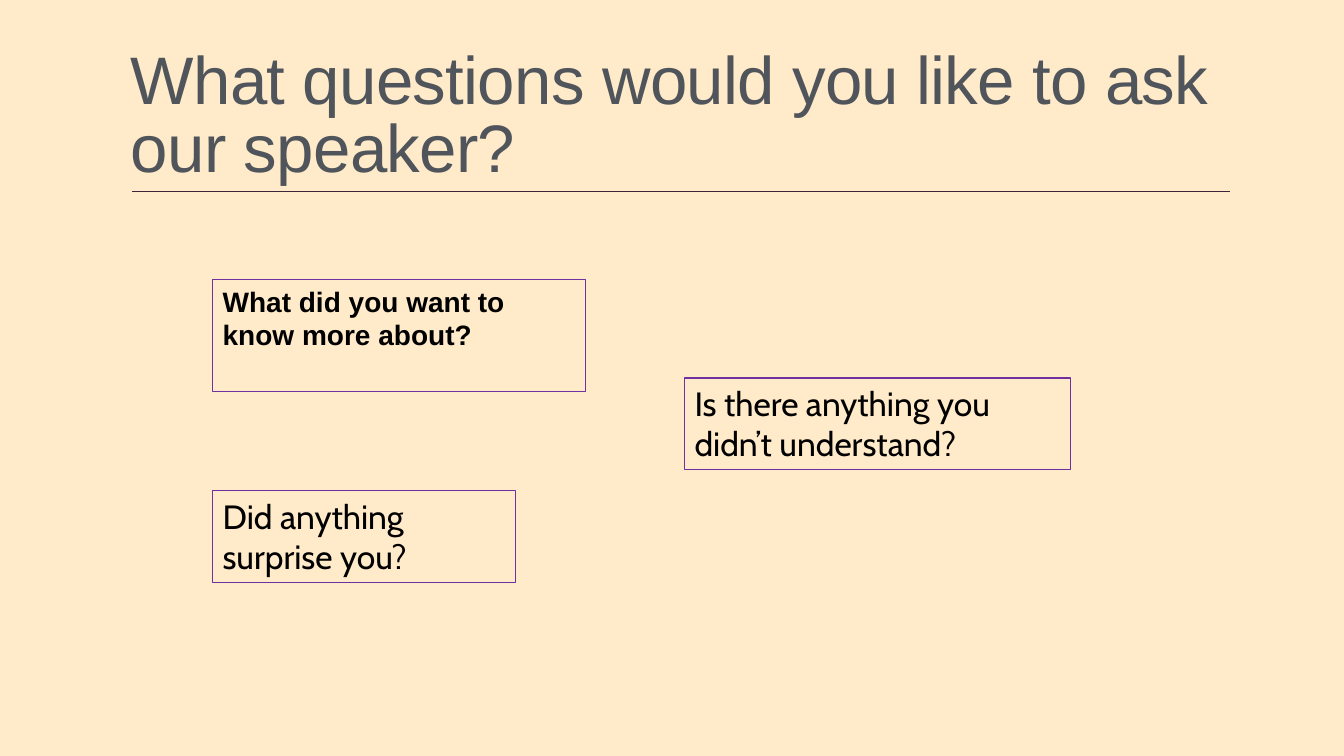
from dataclasses import dataclass

from lxml.etree import SubElement
from pptx import Presentation
from pptx.dml.color import RGBColor
from pptx.enum.shapes import MSO_CONNECTOR, MSO_SHAPE
from pptx.enum.text import MSO_ANCHOR, PP_ALIGN
from pptx.oxml.ns import qn
from pptx.util import Inches, Pt


@dataclass(frozen=True)
class Theme:
    """Colours, fonts and type sizes of the slide."""
    background: RGBColor = RGBColor(0xFF, 0xEA, 0xCA)
    title: RGBColor = RGBColor(0x50, 0x55, 0x5B)
    rule: RGBColor = RGBColor(0x40, 0x24, 0x3C)
    border: RGBColor = RGBColor(0x70, 0x30, 0xA0)
    text: RGBColor = RGBColor(0, 0, 0)
    heading_font: str = "Arial"
    body_font: str = "Cabin"
    title_size: int = 48
    lead_size: int = 20
    question_size: int = 24


THEME = Theme()


def write_text(shape, text, font_name, size, color, anchor, bold=False):
    """Fill a shape with one left-aligned paragraph and return it."""
    frame = shape.text_frame
    frame.text = text
    frame.word_wrap = True
    frame.vertical_anchor = anchor
    paragraph = frame.paragraphs[0]
    paragraph.alignment = PP_ALIGN.LEFT
    font = paragraph.runs[0].font
    font.name = font_name
    font.size = Pt(size)
    font.bold = bold
    font.color.rgb = color
    return paragraph


def add_title(slide, left, top, width, height, text):
    """Place the title with a rule along the bottom of its box."""
    rule_left, rule_width = left + 0.11, width - 0.11
    bottom = top + height
    rule = slide.shapes.add_connector(
        MSO_CONNECTOR.STRAIGHT, Inches(rule_left), Inches(bottom),
        Inches(rule_left + rule_width), Inches(bottom))
    rule.line.color.rgb = THEME.rule
    rule.line.width = Pt(1)
    SubElement(rule._element.spPr, qn("a:effectLst"))

    title = slide.shapes.add_textbox(
        Inches(left), Inches(top), Inches(width), Inches(height))
    paragraph = write_text(title, text, THEME.heading_font, THEME.title_size,
                           THEME.title, MSO_ANCHOR.BOTTOM)
    paragraph.line_spacing = 0.85
    paragraph.runs[0].font._element.set("spc", "-50")


def add_question(slide, left, top, width, height, text, font_name, size, bold=False):
    """Place one outlined question box."""
    box = slide.shapes.add_shape(
        MSO_SHAPE.RECTANGLE, Inches(left), Inches(top), Inches(width), Inches(height))
    box.shadow.inherit = False
    box.fill.background()
    box.line.color.rgb = THEME.border
    box.line.width = Pt(0.75)
    write_text(box, text, font_name, size, THEME.text, MSO_ANCHOR.TOP, bold)


def build_slide(presentation):
    """Build the slide of questions for the speaker."""
    slide = presentation.slides.add_slide(presentation.slide_layouts[6])
    fill = slide.background.fill
    fill.solid()
    fill.fore_color.rgb = THEME.background

    add_title(slide, 1.2, 0.31, 11, 1.59,
              "What questions would you like to ask our speaker?")
    add_question(slide, 2.11, 2.77, 3.7, 1.11, "What did you want to know more about?",
                 THEME.heading_font, THEME.lead_size, bold=True)
    add_question(slide, 6.79, 3.75, 3.83, 0.91, "Is there anything you didn’t understand?",
                 THEME.body_font, THEME.question_size)
    add_question(slide, 2.11, 4.87, 3, 0.91, "Did anything surprise you?",
                 THEME.body_font, THEME.question_size)


def main():
    """Create and save the presentation."""
    presentation = Presentation()
    presentation.slide_width = Inches(13.33)
    presentation.slide_height = Inches(7.5)
    build_slide(presentation)
    presentation.save("out.pptx")


if __name__ == "__main__":
    main()
